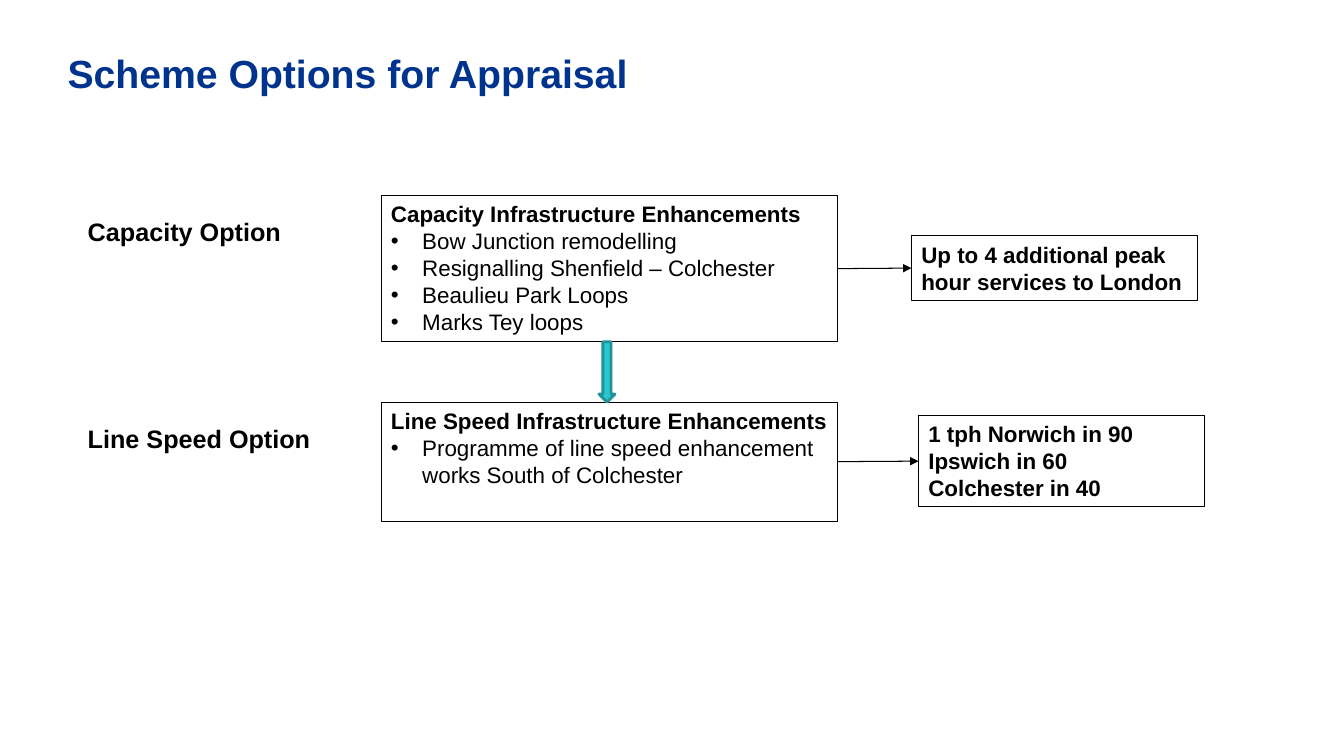
import pptx
import pptx.util
import pptx.dml.color
import pptx.enum.shapes
import pptx.enum.text
import pptx.oxml.ns
from lxml import etree

Inches, Pt = pptx.util.Inches, pptx.util.Pt
ANCHOR = pptx.enum.text.MSO_ANCHOR
SHAPE = pptx.enum.shapes.MSO_SHAPE

THEME = {
    "font": "Arial",
    "title": "00338D", "ink": "000000", "arrow": "2CC6CE", "arrow_edge": "219298",
    "title_size": 28, "label_size": 18, "box_size": 16,
    "thin": 0.75, "thick": 2,
}
TITLE = "Scheme Options for Appraisal"
# Boxes are (left, top, width, height); bullets follow the headings.
OPTIONS = [
    {
        "label": "Capacity Option", "label_top": 2.15,
        "works_box": (3.78, 1.94, 4.53, 1.45),
        "works": ["Capacity Infrastructure Enhancements"],
        "bullets": ["Bow Junction remodelling", "Resignalling Shenfield – Colchester",
                    "Beaulieu Park Loops", "Marks Tey loops"],
        "outcome_box": (9.04, 2.34, 2.84, 0.64),
        "outcome": ["Up to 4 additional peak hour services to London"],
    },
    {
        "label": "Line Speed Option", "label_top": 4.2,
        "works_box": (3.78, 3.99, 4.53, 1.18),
        "works": ["Line Speed Infrastructure Enhancements"],
        "bullets": ["Programme of line speed enhancement works South of Colchester"],
        "outcome_box": (9.11, 4.12, 2.84, 0.91),
        "outcome": ["1 tph Norwich in 90", "Ipswich in 60", "Colchester in 40"],
    },
]
LABEL_LEFT, LABEL_W, LABEL_H = 0.87, 2.25, 0.41
ARROW_LEFT, ARROW_W = 5.94, 0.16
BULLET_INDENT = Inches(0.31)


def rgb(name):
    return pptx.dml.color.RGBColor.from_string(THEME[name])


def add_xml(parent, tag, **attrs):
    return etree.SubElement(parent, pptx.oxml.ns.qn(tag), **attrs)


def set_line(s, color, width):
    s.line.color.rgb = rgb(color)
    s.line.width = Pt(THEME[width])


def write(tf, headings, bullets=(), size="box_size", color="ink"):
    """Bold headings, then regular bulleted lines."""
    tf.word_wrap = True
    for i, text in enumerate([*headings, *bullets]):
        p = tf.paragraphs[0] if i == 0 else tf.add_paragraph()
        p.alignment = pptx.enum.text.PP_ALIGN.LEFT
        is_bullet = i >= len(headings)
        if is_bullet:
            pPr = p._p.get_or_add_pPr()
            pPr.set("marL", str(BULLET_INDENT))
            pPr.set("indent", str(-BULLET_INDENT))
            add_xml(pPr, "a:buFont", typeface=THEME["font"])
            add_xml(pPr, "a:buChar", char="•")
        r = p.add_run()
        r.text = text
        style = {"name": THEME["font"], "size": Pt(THEME[size]), "bold": not is_bullet}
        for key, value in style.items():
            setattr(r.font, key, value)
        r.font.color.rgb = rgb(color)


def add_label(slide, box, text, size, color, anchor):
    tf = slide.shapes.add_textbox(*map(Inches, box)).text_frame
    margins = dict.fromkeys(("margin_left", "margin_top", "margin_right", "margin_bottom"), 0)
    for key, value in {**margins, "vertical_anchor": anchor}.items():
        setattr(tf, key, value)
    write(tf, [text], size=size, color=color)


def add_box(slide, box, headings, bullets=()):
    s = slide.shapes.add_shape(SHAPE.RECTANGLE, *map(Inches, box))
    s.shadow.inherit = False
    s.fill.background()
    set_line(s, "ink", "thin")
    s.text_frame.vertical_anchor = ANCHOR.TOP
    write(s.text_frame, headings, bullets)
    return s


def link(slide, source, target):
    """Arrow from the right side of source to the left side of target."""
    c = slide.shapes.add_connector(pptx.enum.shapes.MSO_CONNECTOR.STRAIGHT, 0, 0, 0, 0)
    c.begin_connect(source, 3)
    c.end_connect(target, 1)
    set_line(c, "ink", "thin")
    add_xml(c.line._get_or_add_ln(), "a:tailEnd", type="triangle")
    add_xml(c._element.spPr, "a:effectLst")


def add_down_arrow(slide, upper, lower):
    top = upper.top + upper.height
    s = slide.shapes.add_shape(SHAPE.DOWN_ARROW, Inches(ARROW_LEFT), top,
                               Inches(ARROW_W), lower.top - top)
    s.shadow.inherit = False
    s.fill.solid()
    s.fill.fore_color.rgb = rgb("arrow")
    set_line(s, "arrow_edge", "thick")


def main():
    prs = pptx.Presentation()
    prs.slide_width, prs.slide_height = Inches(13.33), Inches(7.5)
    slide = prs.slides.add_slide(prs.slide_layouts[6])
    add_label(slide, (0.67, 0.38, 12.03, 0.68), TITLE, "title_size", "title", ANCHOR.MIDDLE)
    works_boxes = []
    for option in OPTIONS:
        add_label(slide, (LABEL_LEFT, option["label_top"], LABEL_W, LABEL_H),
                  option["label"], "label_size", "ink", ANCHOR.TOP)
        works = add_box(slide, option["works_box"], option["works"], option["bullets"])
        outcome = add_box(slide, option["outcome_box"], option["outcome"])
        link(slide, works, outcome)
        works_boxes.append(works)
    add_down_arrow(slide, *works_boxes)
    prs.save("out.pptx")


if __name__ == "__main__":
    main()
